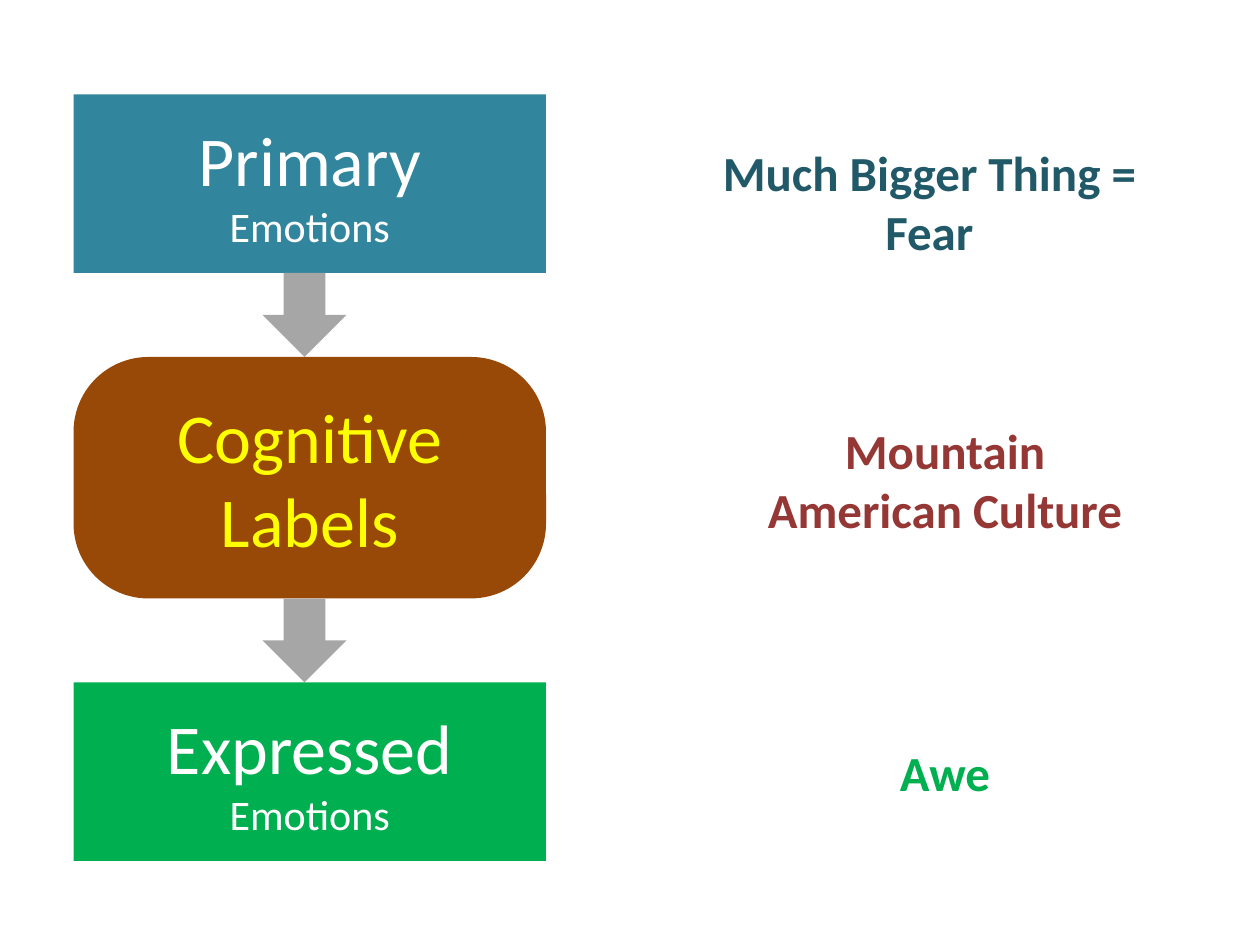
"""Build a slide on how primary emotions become expressed emotions."""
import pptx
import pptx.dml.color
import pptx.enum.shapes
import pptx.enum.text
import pptx.util

Pt = pptx.util.Pt
SHAPES = pptx.enum.shapes.MSO_SHAPE


def color(value):
    return pptx.dml.color.RGBColor.from_string(value)


def write_lines(shape, lines, text_color, bold=False):
    frame = shape.text_frame
    frame.word_wrap = True
    for index, (text, size) in enumerate(lines):
        paragraph = frame.add_paragraph() if index else frame.paragraphs[0]
        paragraph.alignment = pptx.enum.text.PP_ALIGN.CENTER
        run = paragraph.add_run()
        run.text = text
        font_format = {"name": "Calibri", "size": Pt(size), "bold": bold}
        for name, value in font_format.items():
            setattr(run.font, name, value)
        run.font.color.rgb = color(text_color)


presentation = pptx.Presentation()
page_format = {"slide_width": Pt(720), "slide_height": Pt(540)}
for name, value in page_format.items():
    setattr(presentation, name, value)
slide = presentation.slides.add_slide(presentation.slide_layouts[6])

stages = [
    (SHAPES.RECTANGLE, 102, "31859C", "FFFFFF", [("Primary", 40), ("Emotions", 24)]),
    (SHAPES.ROUNDED_RECTANGLE, 138, "984807", "FFFF00", [("Cognitive Labels", 40)]),
    (SHAPES.RECTANGLE, 102, "00B050", "FFFFFF", [("Expressed", 40), ("Emotions", 24)]),
]
arrow_size = 48
blocks = []
top = 54
for index, (kind, height, fill, text_color, lines) in enumerate(stages):
    if index:
        blocks.append((SHAPES.DOWN_ARROW, 150, top, arrow_size, arrow_size, "A6A6A6", "FFFFFF", []))
        top += arrow_size
    blocks.append((kind, 42, top, 270, height, fill, text_color, lines))
    top += height

for kind, left, top, width, height, fill, text_color, lines in blocks:
    shape = slide.shapes.add_shape(kind, Pt(left), Pt(top), Pt(width), Pt(height))
    shape.shadow.inherit = False
    shape.fill.solid()
    shape.fill.fore_color.rgb = color(fill)
    shape.line.fill.background()
    if kind == SHAPES.ROUNDED_RECTANGLE:
        shape.adjustments[0] = 0.31
    shape.text_frame.vertical_anchor = pptx.enum.text.MSO_ANCHOR.MIDDLE
    write_lines(shape, lines, text_color)

examples = [
    (396, 78, 270, 75, "215968", ["Much Bigger Thing = Fear"]),
    (414, 237, 252, 75, "953735", ["Mountain", "American Culture"]),
    (414, 420.5, 252, 41, "00B050", ["Awe"]),
]
for left, top, width, height, text_color, lines in examples:
    text_box = slide.shapes.add_textbox(Pt(left), Pt(top), Pt(width), Pt(height))
    text_box.text_frame.auto_size = pptx.enum.text.MSO_AUTO_SIZE.SHAPE_TO_FIT_TEXT
    write_lines(text_box, [(line, 28) for line in lines], text_color, bold=True)

presentation.save("out.pptx")
